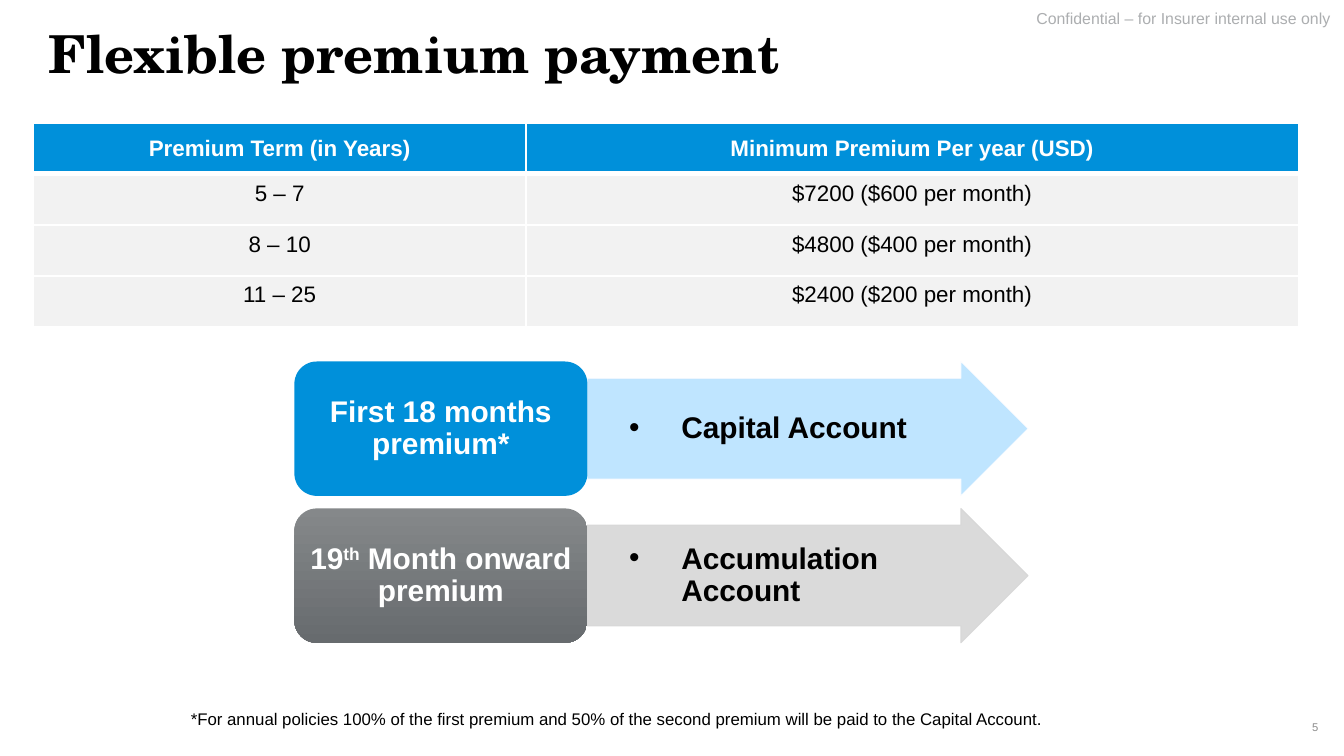
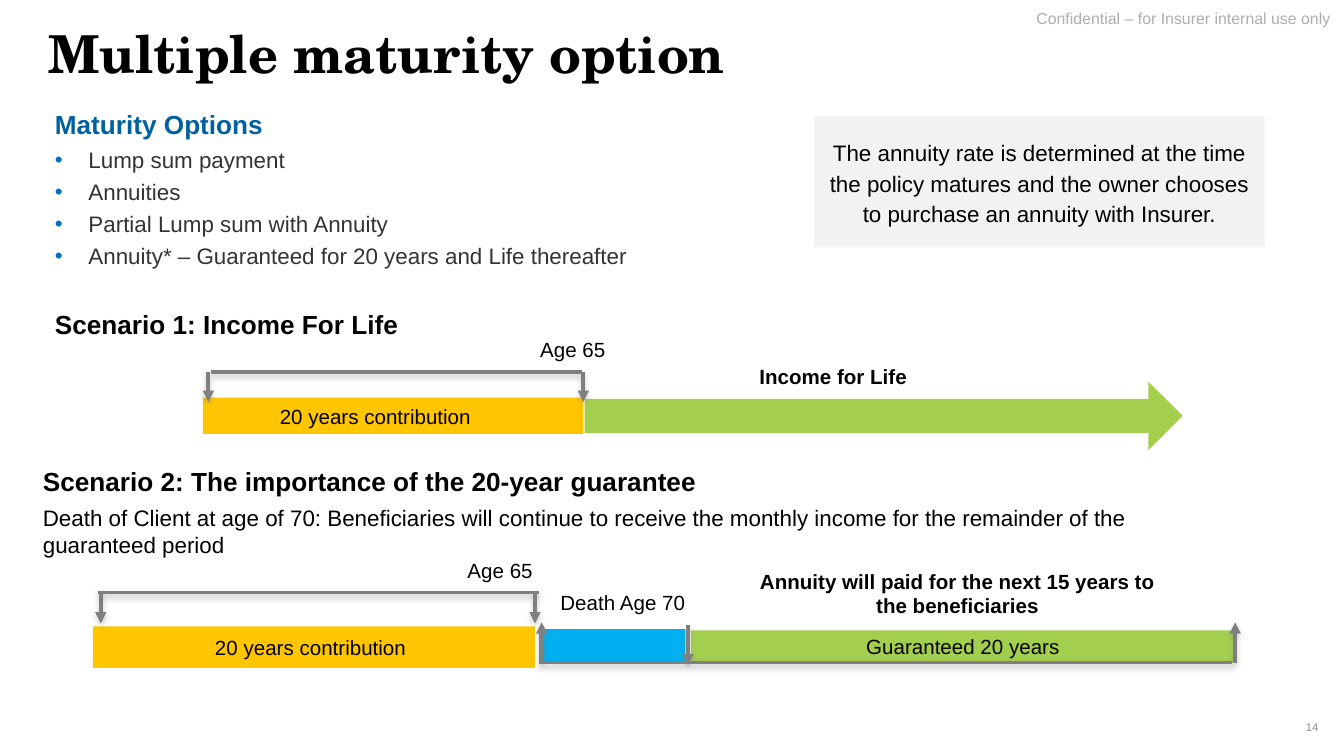
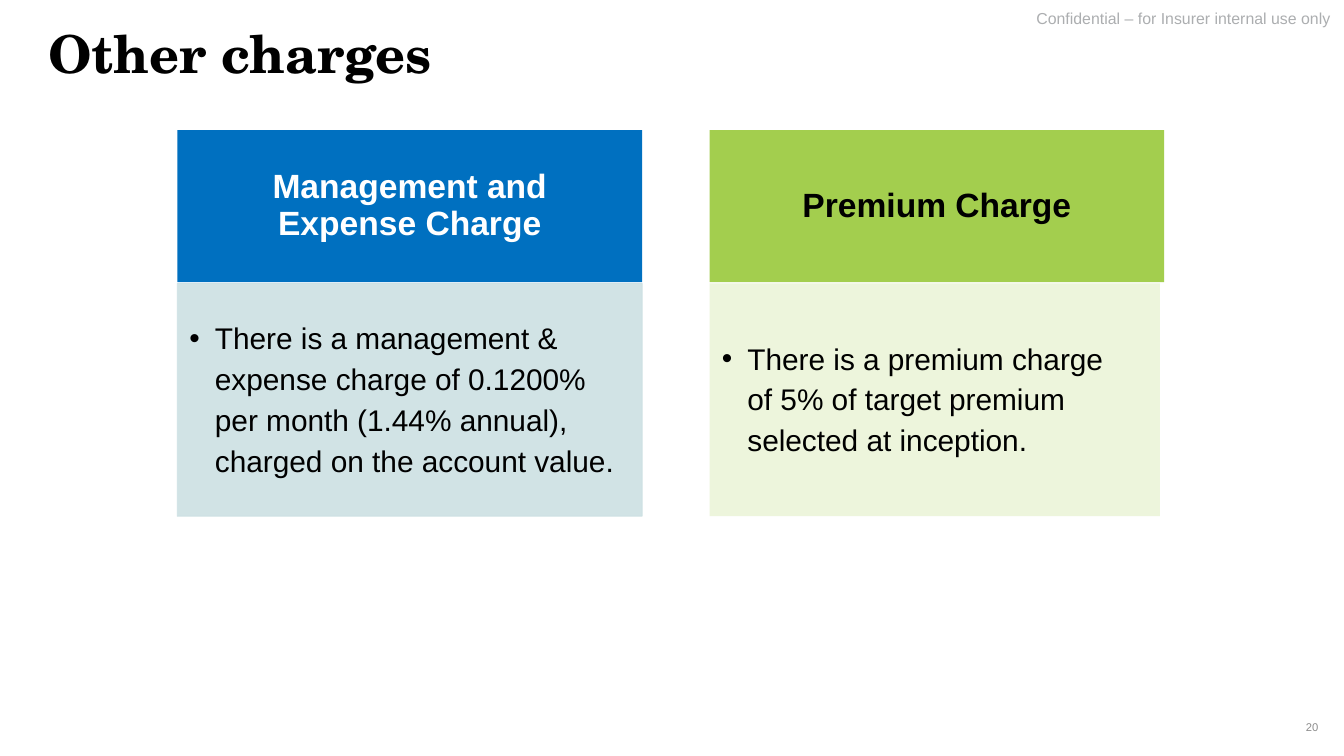
from lxml import etree
from pptx import Presentation
from pptx.dml.color import RGBColor
from pptx.enum.shapes import MSO_CONNECTOR, MSO_SHAPE
from pptx.enum.text import MSO_ANCHOR, MSO_AUTO_SIZE, PP_ALIGN
from pptx.oxml.ns import qn
from pptx.util import Pt

LEFT, CENTER, RIGHT = PP_ALIGN.LEFT, PP_ALIGN.CENTER, PP_ALIGN.RIGHT
TOP, MIDDLE = MSO_ANCHOR.TOP, MSO_ANCHOR.MIDDLE
RECTANGLE, ROUNDED = MSO_SHAPE.RECTANGLE, MSO_SHAPE.ROUNDED_RECTANGLE
ARROW = MSO_SHAPE.RIGHT_ARROW
STRAIGHT = MSO_CONNECTOR.STRAIGHT
NO_AUTOFIT = MSO_AUTO_SIZE.NONE

BODY_FONT, TITLE_FONT = "Arial", "TeX Gyre Schola"
TITLE_ONLY = 5
NO_INSETS = (0, 0, 0, 0)
BOX_INSETS = (7.2, 3.6, 7.2, 3.6)
SMALL_INSETS = (5, 2.9, 5, 2.9)

COLORS = {
    "black": "000000", "white": "FFFFFF", "text": "333333",
    "notice": "ACAEB0", "number": "8C8C8C", "panel": "F2F2F2",
    "sky": "0090DA", "pale_sky": "B9E3FF", "silver": "D7D7D7",
    "steel_light": "85888A", "steel_dark": "676B6E",
    "heading": "0061A0", "blue": "0070C0", "cyan": "00B0F0",
    "amber": "FFC600", "green": "A3CE4E", "pale_green": "EDF5DC",
    "pale_teal": "CCE0E3", "bracket": "808080",
}


def color(name):
    return RGBColor.from_string(COLORS[name])


def points(values):
    return [Pt(value) for value in values]


# ---- Text ----
def add_bullet(para, hanging, left, tint):
    properties = para._p.get_or_add_pPr()
    properties.set("marL", str(Pt(left)))
    properties.set("indent", str(-Pt(hanging)))
    if tint:
        bullet_color = etree.SubElement(properties, qn("a:buClr"))
        etree.SubElement(bullet_color, qn("a:srgbClr"), val=COLORS[tint])
    etree.SubElement(properties, qn("a:buFont"), typeface=BODY_FONT)
    etree.SubElement(properties, qn("a:buChar"), char="•")


def write(frame, text, size=12, tint="black", bold=False, font=BODY_FONT,
          align=LEFT, spacing=1.0, before=0, after=0, bullet=None,
          bullet_tint=None, superscript=None, new=False):
    """Fill the first paragraph, or append one; bullet is (hanging, left)."""
    para = frame.add_paragraph() if new else frame.paragraphs[0]
    if bullet:
        add_bullet(para, *bullet, bullet_tint)
    para.alignment = align
    para.line_spacing = spacing
    para.space_before, para.space_after = Pt(before), Pt(after)
    for index, line in enumerate(text.split("\n")):
        if index:
            para.add_line_break()
        for part in line.partition(superscript) if superscript else [line]:
            span = para.add_run()
            span.text = part
            span.font.name, span.font.size = font, Pt(size)
            span.font.bold = bold
            span.font.color.rgb = color(tint)
            if part == superscript:
                span.font._element.set("baseline", "30000")
    for line_break in para._p.findall(qn("a:br")):
        etree.SubElement(line_break, qn("a:rPr"), sz=str(size * 100))


def prepare(frame, insets, anchor):
    frame.word_wrap = True
    frame.auto_size = NO_AUTOFIT
    frame.vertical_anchor = anchor
    (frame.margin_left, frame.margin_top,
     frame.margin_right, frame.margin_bottom) = points(insets)


def add_text(page, place, text, insets=NO_INSETS, anchor=TOP, **style):
    frame = page.shapes.add_textbox(*points(place)).text_frame
    prepare(frame, insets, anchor)
    write(frame, text, **style)
    return frame


# ---- Shapes ----
def add_box(page, place, fill, text=None, kind=RECTANGLE, insets=NO_INSETS,
            outline=None, opacity=None, **style):
    box = page.shapes.add_shape(kind, *points(place))
    box.shadow.inherit = False
    if isinstance(fill, tuple):
        box.fill.gradient()
        box.fill.gradient_angle = 270
        for stop, name in zip(box.fill.gradient_stops, fill):
            stop.color.rgb = color(name)
    else:
        box.fill.solid()
        box.fill.fore_color.rgb = color(fill)
    if outline:
        box.line.color.rgb = color(outline)
        box.line.width = Pt(0.5)
    else:
        box.line.fill.background()
    if opacity:
        for tone in box._element.spPr.iter(qn("a:srgbClr")):
            etree.SubElement(tone, qn("a:alpha"), val=str(opacity * 1000))
    if text:
        prepare(box.text_frame, insets, MIDDLE)
        write(box.text_frame, text, **style)
    return box


def add_line(page, start, end, arrow=False):
    line = page.shapes.add_connector(STRAIGHT, *points(start + end))
    line.line.color.rgb = color("bracket")
    line.line.width = Pt(2)
    if arrow:
        etree.SubElement(line.line._get_or_add_ln(), qn("a:tailEnd"),
                         type="triangle")
    effects = etree.SubElement(line._element.spPr, qn("a:effectLst"))
    shadow = etree.SubElement(
        effects, qn("a:outerShdw"), blurRad=str(Pt(3.1)), dist=str(Pt(1.6)),
        dir="5400000", rotWithShape="0")
    tone = etree.SubElement(shadow, qn("a:srgbClr"), val=COLORS["bracket"])
    etree.SubElement(tone, qn("a:alpha"), val="38000")


def add_bracket(page, left, right, bar_y, tips, tip_y):
    for tip in tips:
        add_line(page, (tip, bar_y), (tip, tip_y), arrow=True)
    add_line(page, (left, bar_y), (right, bar_y))


# ---- Table ----
def set_borders(cell, **widths):
    properties = cell._tc.get_or_add_tcPr()
    for side in "LRTB":
        border = etree.SubElement(properties, qn(f"a:ln{side}"),
                                  w=str(Pt(widths.get(side, 1))))
        fill = etree.SubElement(border, qn("a:solidFill"))
        etree.SubElement(fill, qn("a:srgbClr"), val=COLORS["white"])


def add_premium_table(page, left, top, widths, row_height, rows):
    table = page.shapes.add_table(
        len(rows), len(widths),
        *points((left, top, sum(widths), row_height * len(rows)))).table
    table.horz_banding = False
    for column, width in zip(table.columns, widths):
        column.width = Pt(width)
    for row_index, values in enumerate(rows):
        header = row_index == 0
        table.rows[row_index].height = Pt(row_height)
        for column_index, value in enumerate(values):
            cell = table.cell(row_index, column_index)
            heavy = {0: {"B": 3}, 1: {"T": 3}}.get(row_index, {})
            set_borders(cell, **heavy)
            cell.fill.solid()
            cell.fill.fore_color.rgb = color("sky" if header else "panel")
            cell.vertical_anchor = MIDDLE if header else TOP
            write(cell.text_frame, value, bold=header, align=CENTER,
                  tint="white" if header else "black")


# ---- Shared page parts ----
def add_page(deck, title, number):
    page = deck.slides.add_slide(deck.slide_layouts[TITLE_ONLY])
    add_text(page, (499.7, 5.8, 220.3, 12.2),
             "Confidential – for Insurer internal use only",
             insets=(7.2, 0, 7.2, 0), size=8.5, tint="notice", align=RIGHT,
             spacing=0.9)
    heading = page.shapes.title
    heading.left, heading.top, heading.width, heading.height = points(
        (20.9, 12.2, 546.5, 38.9))
    prepare(heading.text_frame, SMALL_INSETS, TOP)
    write(heading.text_frame, title, size=28, bold=True, font=TITLE_FONT,
          spacing=0.9)
    add_text(page, (658, 378.7, 53.3, 21.6), str(number), anchor=MIDDLE,
             insets=SMALL_INSETS, size=6, tint="number", align=RIGHT)
    return page


# ---- Pages ----
def build_premium_page(deck):
    page = add_page(deck, "Flexible premium payment", 5)
    add_premium_table(page, 18, 65.9, (263.7, 414), 27.3, [
        ("Premium Term (in Years)", "Minimum Premium Per year (USD)"),
        ("5 – 7", "$7200 ($600 per month)"),
        ("8 – 10", "$4800 ($400 per month)"),
        ("11 – 25", "$2400 ($200 per month)"),
    ])
    flows = [
        ("First 18 months premium*", None, "sky",
         "Capital Account", "pale_sky", "white"),
        ("19th Month onward premium", "th", ("steel_light", "steel_dark"),
         "Accumulation Account", "silver", "silver"),
    ]
    for index, flow in enumerate(flows):
        premium, superscript, fill, account, arrow_fill, outline = flow
        top = 193.7 + index * 78.7
        arrow = add_box(page, (314.6, top, 236.2, 72), arrow_fill, account,
                        kind=ARROW, insets=(0.7, 0.7, 19, 0.7),
                        outline=outline, opacity=90, size=16, bold=True,
                        spacing=0.9, bullet=(28, 49.7))
        arrow.adjustments[0], arrow.adjustments[1] = 0.75, 0.5
        add_box(page, (157.7, top, 157, 72), fill, premium, kind=ROUNDED,
                insets=(4, 2, 4, 2), size=16, tint="white", bold=True,
                align=CENTER, spacing=0.9, superscript=superscript)
    add_text(page, (86.4, 374.4, 490.3, 23),
             "*For annual policies 100% of the first premium and 50% of the "
             "second premium will be paid to the Capital Account.",
             insets=(15.8, 5.8, 15.8, 5.8), anchor=MIDDLE, size=9,
             spacing=0.9)


def build_maturity_page(deck):
    page = add_page(deck, "Multiple maturity option", 14)

    # Options and annuity note
    options = add_text(page, (22.3, 54.7, 330.5, 94.3), "Maturity Options",
                       insets=BOX_INSETS, size=14, tint="heading", bold=True,
                       after=3.2)
    for option in ("Lump sum payment", "Annuities",
                   "Partial Lump sum with Annuity",
                   "Annuity* – Guaranteed for 20 years and Life thereafter"):
        write(options, option, tint="text", after=2.8, bullet=(18, 18),
              bullet_tint="blue", new=True)
    add_box(page, (436.3, 61.9, 241.2, 70.6), "panel",
            "The annuity rate is determined at the time the policy matures "
            "and the owner chooses to purchase an annuity with Insurer.",
            insets=BOX_INSETS, align=CENTER, spacing=1.14)

    # Scenario 1
    add_text(page, (22.3, 159.8, 261.4, 24.5), "Scenario 1: Income For Life",
             insets=BOX_INSETS, size=14, bold=True, spacing=1.1)
    add_box(page, (108.7, 213.1, 203.8, 19.4), "amber",
            "20 years contribution", insets=(0, 0, 19, 0), size=11,
            align=CENTER)
    add_box(page, (313.2, 204.5, 320.4, 36.7), "green", kind=ARROW)
    add_text(page, (289.4, 180.7, 67, 18.7), "Age 65", size=11)
    add_text(page, (406.8, 195.1, 186.5, 15.8), "Income for Life", size=11,
             bold=True)
    add_bracket(page, 113, 311.8, 199.4, (111.6, 312.5), 215.3)

    # Scenario 2
    guarantee = add_text(
        page, (23, 249.1, 607.7, 52.6),
        "Scenario 2: The importance of the 20-year guarantee", size=14,
        bold=True)
    write(guarantee,
          "Death of Client at age of 70: Beneficiaries will continue to "
          "receive the monthly income for the remainder of the guaranteed "
          "period", before=4, new=True)
    add_box(page, (49.7, 335.5, 236.9, 22.3), "amber",
            "20 years contribution", insets=(0, 0, 3.5, 0), size=11,
            align=CENTER)
    add_box(page, (288.7, 337, 78.5, 18), "cyan")
    add_box(page, (370.1, 337.7, 291.6, 17.3), "green",
            "Guaranteed 20 years", size=11, align=CENTER)
    add_text(page, (229, 298.8, 77.8, 12.2), "Age 65", size=11, align=CENTER)
    add_text(page, (283.7, 316.1, 100, 15.1), "Death Age 70", size=11,
             align=CENTER)
    add_text(page, (402.5, 304.6, 221, 28),
             "Annuity will paid for the next 15 years to the beneficiaries",
             size=11, bold=True, align=CENTER)
    add_bracket(page, 52.6, 288.7, 317.5, (54, 286.6), 334)
    add_line(page, (368.6, 334.8), (368.6, 356.4), arrow=True)
    add_bracket(page, 288.7, 660.2, 355, (290.2, 661.7), 333.4)


def build_charges_page(deck):
    page = add_page(deck, "Other charges", 20)
    charges = [
        (95, 249.1, 249.1, "blue", "white", "Management and\nExpense Charge",
         {"fill": "pale_teal", "outline": "pale_teal", "opacity": 90},
         "There is a management & expense charge of 0.1200% per month "
         "(1.44% annual), charged on the account value."),
        (380.2, 243.4, 241.2, "green", "black", "Premium Charge",
         {"fill": "pale_green"},
         "There is a premium charge\nof 5% of target premium selected at "
         "inception."),
    ]
    for left, width, body_width, fill, tint, name, look, detail in charges:
        add_box(page, (left, 69.8, width, 81.4), fill, name,
                insets=(10, 5.8, 10, 5.8), size=18, tint=tint, bold=True,
                align=CENTER, spacing=0.9)
        add_box(page, (left, 151.9, body_width, 124.6), text=detail,
                insets=(6.5, 6.5, 8.6, 10), size=16, spacing=1.14,
                bullet=(13.7, 13.7), **look)


def main():
    deck = Presentation()
    deck.slide_width, deck.slide_height = Pt(720), Pt(405)
    build_premium_page(deck)
    build_maturity_page(deck)
    build_charges_page(deck)
    deck.save("out.pptx")


if __name__ == "__main__":
    main()
